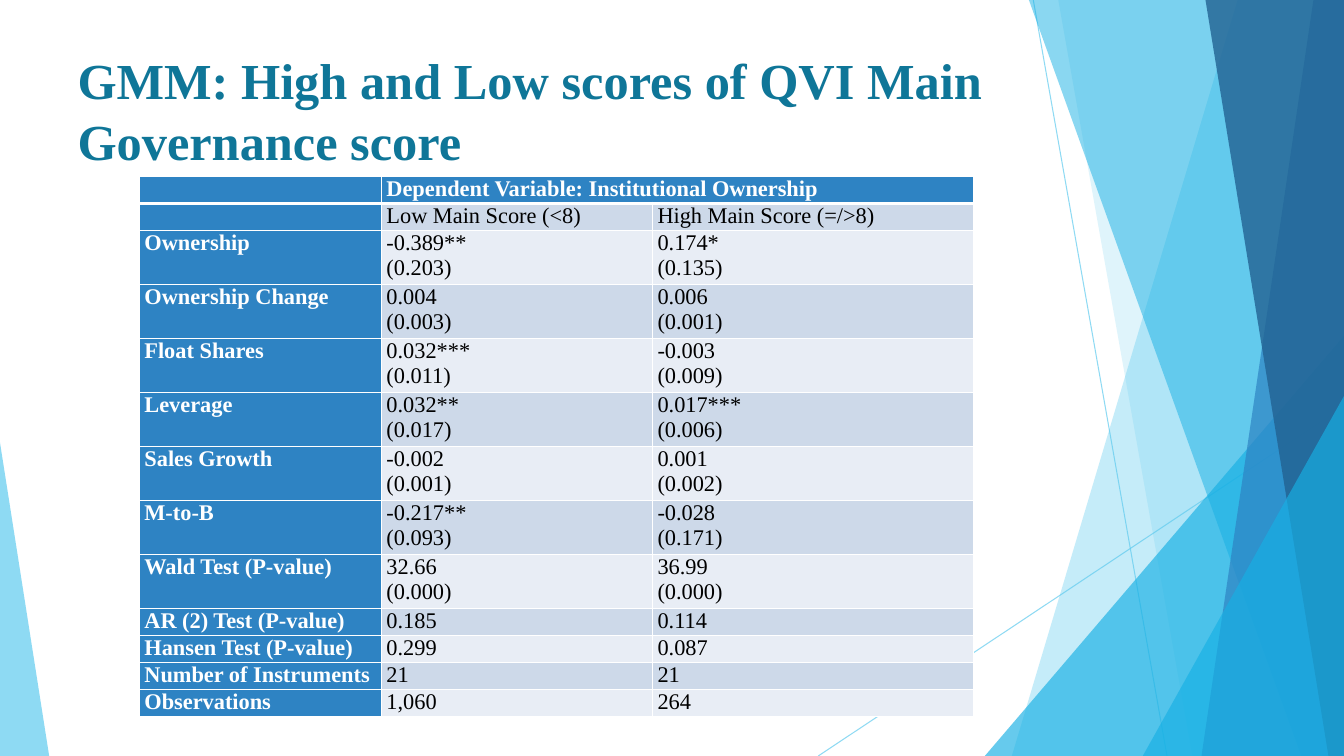
from dataclasses import dataclass

from lxml import etree
from pptx import Presentation
from pptx.dml.color import RGBColor
from pptx.enum.shapes import MSO_CONNECTOR, MSO_SHAPE
from pptx.enum.text import MSO_ANCHOR, MSO_AUTO_SIZE, PP_ALIGN
from pptx.oxml import parse_xml
from pptx.oxml.ns import nsdecls, qn
from pptx.util import Cm, Pt

STRAIGHT = MSO_CONNECTOR.STRAIGHT
TRIANGLE = MSO_SHAPE.ISOSCELES_TRIANGLE
TOP = MSO_ANCHOR.TOP
NO_AUTOFIT = MSO_AUTO_SIZE.NONE
LEFT, JUSTIFY = PP_ALIGN.LEFT, PP_ALIGN.JUSTIFY
TITLE_ONLY = 5


@dataclass(frozen=True)
class Theme:
    font: str = "Times New Roman"
    title_size: int = 36
    table_size: int = 16
    title: str = "0F7698"
    sky: str = "5FCBEF"
    cyan: str = "17B0E4"
    blue: str = "2E83C3"
    navy: str = "226292"
    bands: tuple = ("E8EDF5", "CDD9E9")
    white: str = "FFFFFF"
    black: str = "000000"


THEME = Theme()
WIDTH, HEIGHT = 33.87, 19.05

RAYS = [((26.04, 0), (29.41, HEIGHT)), ((WIDTH, 10.24), (20.62, HEIGHT))]
FACETS = [
    ("panel", 31.19, 25.5, THEME.sky, 36),
    ("panel", 26.67, 30.05, THEME.sky, 20),
    ("right", 24.82, 8.46, THEME.cyan, 66),
    ("panel", 25.93, 32.79, THEME.cyan, 50),
    ("panel", 33.1, 30.28, THEME.blue, 70),
    ("panel", 30.38, 33.48, THEME.navy, 80),
    ("right", 28.8, 9.98, THEME.cyan, 66),
    ("left", 1.24, 11.15, THEME.sky, 70),
]

COL_WIDTHS = [6.1, 6.83, 8.08]
LINE_HEIGHT = 0.68
ROWS = [
    ("", "Dependent Variable: Institutional Ownership", ""),
    ("", "Low Main Score (<8)", "High Main Score (=/>8)"),
    ("Ownership", "-0.389**\n(0.203)", "0.174*\n(0.135)"),
    ("Ownership Change", "0.004\n(0.003)", "0.006\n(0.001)"),
    ("Float Shares", "0.032***\n(0.011)", "-0.003\n(0.009)"),
    ("Leverage", "0.032**\n(0.017)", "0.017***\n(0.006)"),
    ("Sales Growth", "-0.002\n(0.001)", "0.001\n(0.002)"),
    ("M-to-B", "-0.217**\n(0.093)", "-0.028\n(0.171)"),
    ("Wald Test (P-value)", "32.66\n(0.000)", "36.99\n(0.000)"),
    ("AR (2) Test (P-value)", "0.185", "0.114"),
    ("Hansen Test (P-value)", "0.299", "0.087"),
    ("Number of Instruments", "21", "21"),
    ("Observations", "1,060", "264"),
]


def set_font(p, size, color, bold):
    p.font.name = THEME.font
    p.font.size = Pt(size)
    p.font.bold = bold
    p.font.color.rgb = RGBColor.from_string(color)


def set_alpha(fill_parent, percent):
    color = fill_parent.find(".//" + qn("a:srgbClr"))
    etree.SubElement(color, qn("a:alpha")).set("val", str(percent * 1000))


def add_panel(shapes, box, top_x, bottom_x):
    x, y, w, h = box
    ff = shapes.build_freeform(Cm(x + top_x), Cm(y))
    ff.add_line_segments(
        [(Cm(x + w), Cm(y)), (Cm(x + w), Cm(y + h)), (Cm(x + bottom_x), Cm(y + h))]
    )
    return ff.convert_to_shape()


def add_corner(shapes, box, side, edge, top):
    x, y, w, h = box
    left, right = (0, edge) if side == "left" else (edge, w)
    sp = shapes.add_shape(
        TRIANGLE, Cm(x + left), Cm(y + top), Cm(right - left), Cm(h - top)
    )
    sp.adjustments[0] = 0 if side == "left" else 1
    return sp


def add_backdrop(s, box):
    x, y = box[:2]
    shapes = s.shapes.add_group_shape().shapes
    for (x1, y1), (x2, y2) in RAYS:
        ray = shapes.add_connector(
            STRAIGHT, Cm(x + x1), Cm(y + y1), Cm(x + x2), Cm(y + y2)
        )
        ray.line.width = Pt(0.75)
        ray.line.color.rgb = RGBColor.from_string(THEME.sky)
        sp_pr = ray._element.spPr
        set_alpha(sp_pr, 70)
        etree.SubElement(sp_pr, qn("a:effectLst"))
    for kind, a, b, color, alpha in FACETS:
        if kind == "panel":
            sp = add_panel(shapes, box, a, b)
        else:
            sp = add_corner(shapes, box, kind, a, b)
        sp.shadow.inherit = False
        sp.fill.solid()
        sp.fill.fore_color.rgb = RGBColor.from_string(color)
        set_alpha(sp._element.spPr, alpha)
        sp.line.fill.background()


def add_title(s, box, text):
    title = s.shapes.title
    title.left, title.top, title.width, title.height = map(Cm, box)
    tf = title.text_frame
    tf.text = text
    tf.word_wrap = True
    tf.auto_size = NO_AUTOFIT
    tf.vertical_anchor = TOP
    p = tf.paragraphs[0]
    p.alignment = LEFT
    set_font(p, THEME.title_size, THEME.title, True)


def set_borders(cell, top, bottom):
    tc_pr = cell._tc.get_or_add_tcPr()
    for side, width in (("L", 1), ("R", 1), ("T", top), ("B", bottom)):
        tc_pr.append(parse_xml(
            f'<a:ln{side} {nsdecls("a")} w="{Pt(width)}"><a:solidFill>'
            f'<a:srgbClr val="{THEME.white}"/></a:solidFill></a:ln{side}>'
        ))


def format_cell(cell, text, row, col):
    header = row == 0 or col == 0
    cell.margin_left = cell.margin_right = Cm(0.12)
    cell.margin_top = cell.margin_bottom = 0
    set_borders(cell, 3 if row == 1 else 1, 3 if row == 0 else 1)
    cell.fill.solid()
    cell.fill.fore_color.rgb = RGBColor.from_string(
        THEME.blue if header else THEME.bands[row % 2]
    )
    cell.text_frame.text = text
    for p in cell.text_frame.paragraphs:
        p.alignment = JUSTIFY
        set_font(p, THEME.table_size, THEME.white if header else THEME.black, header)


def add_results(s, box):
    frame = s.shapes.add_table(len(ROWS), len(COL_WIDTHS), *map(Cm, box))
    table = frame.table
    for column, width in zip(table.columns, COL_WIDTHS):
        column.width = Cm(width)
    for i, values in enumerate(ROWS):
        lines = max(v.count("\n") + 1 for v in values)
        table.rows[i].height = Cm(LINE_HEIGHT * lines)
        for j, text in enumerate(values):
            format_cell(table.cell(i, j), text, i, j)
    table.cell(0, 1).merge(table.cell(0, 2))


def main():
    prs = Presentation()
    prs.slide_width, prs.slide_height = Cm(WIDTH), Cm(HEIGHT)
    s = prs.slides.add_slide(prs.slide_layouts[TITLE_ONLY])
    add_backdrop(s, (0, 0, WIDTH, HEIGHT))
    add_title(
        s, (1.7, 1.12, 23.88, 3.66),
        "GMM: High and Low scores of QVI Main Governance score",
    )
    add_results(s, (3.52, 4.45, sum(COL_WIDTHS), 20 * LINE_HEIGHT))
    prs.save("out.pptx")


if __name__ == "__main__":
    main()
